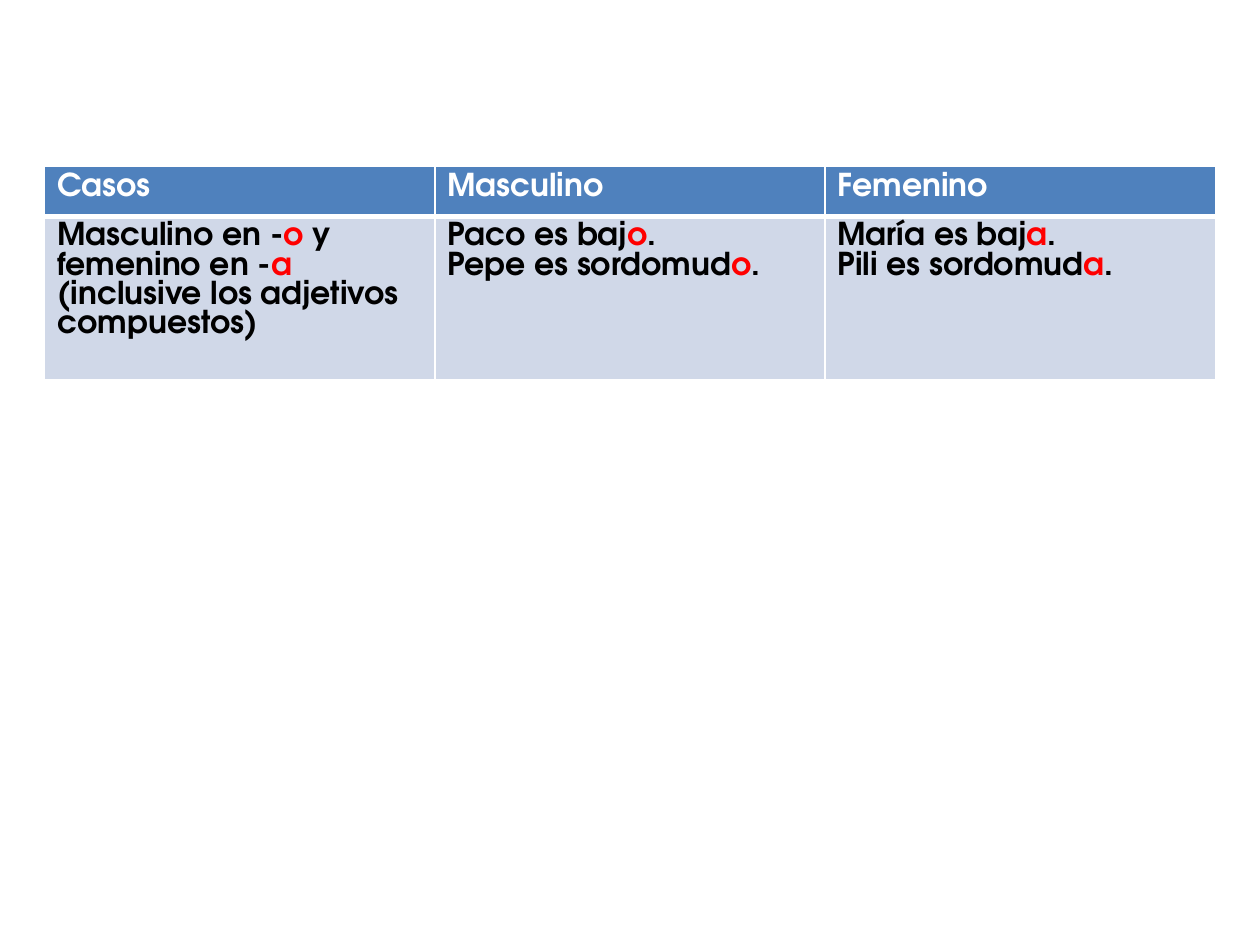
import pptx
import pptx.util
import pptx.dml.color
import pptx.oxml
import pptx.oxml.ns
from pptx.util import Cm

FONT = "TeX Gyre Adventor"
BLUE, PALE = "4F81BD", "D0D8E8"
WHITE, BLACK, RED = "FFFFFF", "000000", "FF0000"

HEADS = ["Casos", "Masculino", "Femenino"]
# Each cell is a list of lines; odd pieces of a line are the marked endings
CASES = [
    [["Masculino en -", "o ", "y femenino en -", "a ",
      "(inclusive los adjetivos compuestos)"]],
    [["Paco es baj", "o", "."], ["Pepe es sordomud", "o", "."]],
    [["María es baj", "a", "."], ["Pili es sordomud", "a", "."]],
]


def paint(target, color):
    """Give a fill a solid colour."""
    target.solid()
    target.fore_color.rgb = pptx.dml.color.RGBColor.from_string(color)


def write(para, text, color=BLACK, size=18, bold=True):
    """Add one formatted run to a paragraph."""
    run = para.add_run()
    run.text = text
    font = run.font
    font.name, font.size, font.bold = FONT, pptx.util.Pt(size), bold
    paint(font.fill, color)


def edge(cell, **widths):
    """Draw white cell borders, widths in points, keyed L, R, T, B."""
    props = cell._tc.get_or_add_tcPr()
    for spot, side in enumerate("LRTB"):
        width = pptx.util.Pt(widths.get(side, 1))
        line = pptx.oxml.parse_xml(
            f'<a:ln{side} {pptx.oxml.ns.nsdecls("a")} w="{width}">'
            f'<a:solidFill><a:srgbClr val="{WHITE}"/></a:solidFill>'
            f'</a:ln{side}>')
        props.insert(spot, line)


def fill_cell(cell, lines, back, color, **widths):
    """Fill one cell with lines of plain and marked pieces."""
    paint(cell.fill, back)
    edge(cell, **widths)
    frame = cell.text_frame
    for row, pieces in enumerate(lines):
        para = frame.add_paragraph() if row else frame.paragraphs[0]
        for spot, text in enumerate(pieces):
            write(para, text, color=RED if spot % 2 else color)


def add_cases(slide, left, top, width, heights):
    """Place the table of adjective endings."""
    table = slide.shapes.add_table(
        len(heights), len(HEADS), left, top, width, sum(heights)).table
    for row, height in zip(table.rows, heights):
        row.height = height
    for col, (head, lines) in enumerate(zip(HEADS, CASES)):
        table.columns[col].width = width // len(HEADS)
        # Header, with a thick rule below
        fill_cell(table.cell(0, col), [[head]], BLUE, WHITE, B=3)
        # Examples
        fill_cell(table.cell(1, col), lines, PALE, BLACK, T=3)


def main():
    deck = pptx.Presentation()
    deck.slide_width, deck.slide_height = Cm(25.4), Cm(19.05)
    slide = deck.slides.add_slide(deck.slide_layouts[6])
    add_cases(slide, Cm(0.9), Cm(3.36), Cm(23.6), [Cm(1), Cm(3.3)])
    deck.save("out.pptx")


if __name__ == "__main__":
    main()
